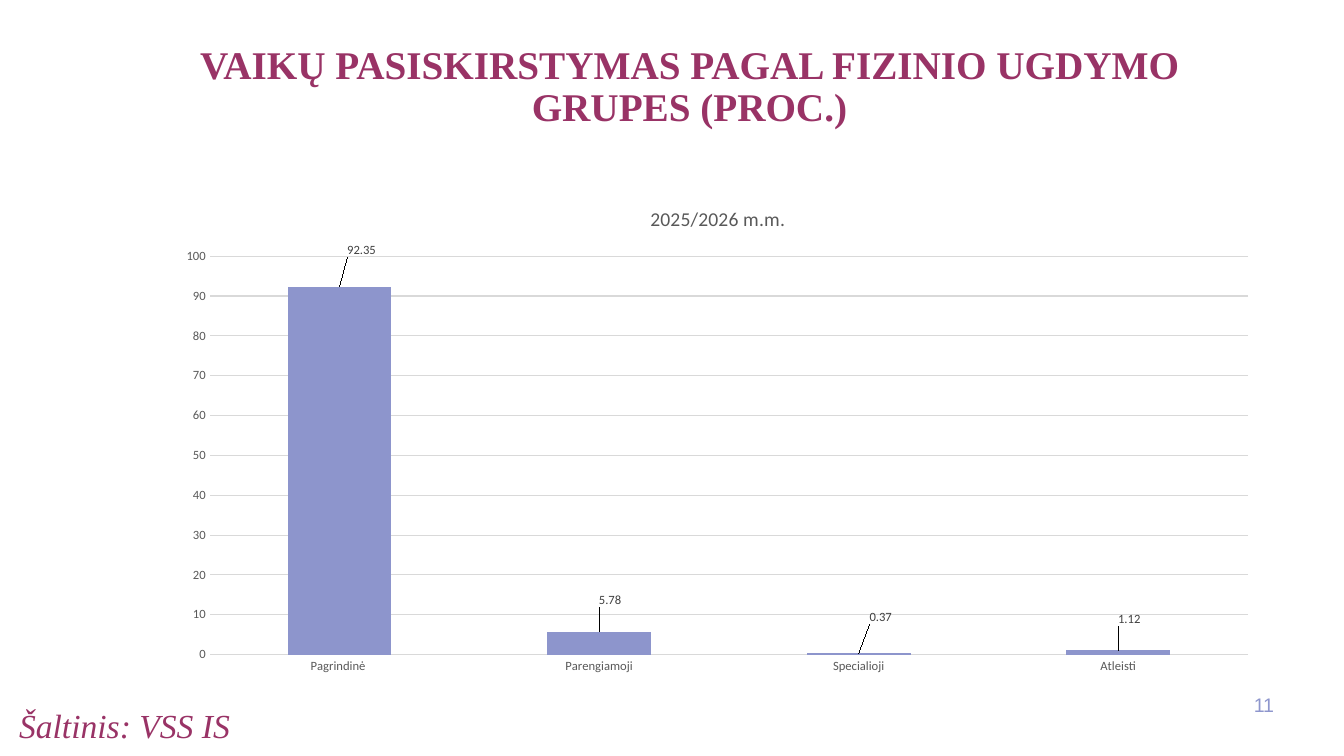
import lxml.etree
import pptx
import pptx.chart.data
import pptx.dml.color
import pptx.enum.chart
import pptx.enum.text
import pptx.oxml
import pptx.oxml.ns
import pptx.util
from pptx.util import Cm

# Content
TITLE = "VAIKŲ PASISKIRSTYMAS PAGAL FIZINIO UGDYMO GRUPES (PROC.)"
SOURCE = "Šaltinis: VSS IS"
PAGE_NUMBER = "11"
SERIES_NAME = "2025/2026 m.m."
# Group, percentage, label shift (fractions of chart width and height)
GROUPS = [
    ("Pagrindinė ", 92.35, (0.02, -0.05)),
    ("Parengiamoji", 5.78, (0.01, -0.04)),
    ("Specialioji", 0.37, (0.02, -0.05)),
    ("Atleisti", 1.12, (0.01, -0.04)),
]
# Left, top, width, height in centimetres
TITLE_BOX = (2.77, 1.02, 29.21, 2.87)
SOURCE_BOX = (0.23, 17.65, 16, 0.97)
NUMBER_BOX = (31.04, 17.25, 1.32, 1.02)
CHART_BOX = (4.17, 4.7, 27.84, 12.55)
PLOT_AREA = {"x": 0.04, "y": 0.14, "w": 0.94, "h": 0.8}


class Theme:
    serif, sans, chart_font = "Times New Roman", "Arial", "Calibri"
    heading, number, bar = "993366", "8E96CD", "8D95CC"
    chart_text, label, grid = "595959", "404040", "D9D9D9"
    title_size, source_size, number_size = 28, 24, 14
    chart_title_size, chart_size, small_size = 14, 10, 9


def rgb(color):
    return pptx.dml.color.RGBColor.from_string(color)


def style(font, name, size, color, bold=False, italic=False):
    font.name, font.size = name, pptx.util.Pt(size)
    font.color.rgb = rgb(color)
    font.bold, font.italic = bold, italic


def add_text(slide, box, text, alignment, anchor, *font, **emphasis):
    frame = slide.shapes.add_textbox(*map(Cm, box)).text_frame
    frame.word_wrap = True
    frame.vertical_anchor = anchor
    paragraph = frame.paragraphs[0]
    paragraph.alignment = alignment
    run = paragraph.add_run()
    run.text = text
    style(run.font, *font, **emphasis)
    return paragraph


def manual_layout(settings):
    layout = pptx.oxml.parse_xml(
        f"<c:layout {pptx.oxml.ns.nsdecls('c')}><c:manualLayout/></c:layout>")
    for tag, value in settings.items():
        lxml.etree.SubElement(
            layout[0], pptx.oxml.ns.qn(f"c:{tag}"), val=str(value))
    return layout


def add_group_chart(slide):
    data = pptx.chart.data.CategoryChartData()
    data.categories = [name for name, _, _ in GROUPS]
    data.add_series(SERIES_NAME, [value for _, value, _ in GROUPS])
    kind = pptx.enum.chart.XL_CHART_TYPE.COLUMN_CLUSTERED
    chart = slide.shapes.add_chart(kind, *map(Cm, CHART_BOX), data).chart
    style(chart.font, Theme.chart_font, Theme.chart_size, "000000")
    chart.has_legend = False

    # Chart title
    chart.has_title = True
    run = chart.chart_title.text_frame.paragraphs[0].add_run()
    run.text = SERIES_NAME
    style(run.font, Theme.chart_font, Theme.chart_title_size, Theme.chart_text)
    chart.chart_title.include_in_layout = False

    # Axes and gridlines
    for axis in (chart.category_axis, chart.value_axis):
        axis.major_tick_mark = pptx.enum.chart.XL_TICK_MARK.NONE
        axis.minor_tick_mark = pptx.enum.chart.XL_TICK_MARK.NONE
        axis.format.line.fill.background()
        style(axis.tick_labels.font, Theme.chart_font, Theme.small_size, Theme.chart_text)
    axis = chart.value_axis
    axis.minimum_scale, axis.maximum_scale, axis.major_unit = 0, 100, 10
    axis.has_major_gridlines = True
    grid_line = axis.major_gridlines.format.line
    grid_line.color.rgb = rgb(Theme.grid)
    grid_line.width = pptx.util.Pt(0.75)

    # Columns
    plot = chart.plots[0]
    plot.gap_width = 150
    plot.vary_by_categories = False
    series = plot.series[0]
    series.format.fill.solid()
    series.format.fill.fore_color.rgb = rgb(Theme.bar)

    # Value labels, each shifted from its column's end
    for index in range(len(GROUPS)):
        label = series.points[index].data_label
        style(label.font, Theme.chart_font, Theme.small_size, Theme.label)
        label.position = pptx.enum.chart.XL_LABEL_POSITION.OUTSIDE_END
    label_elements = series._element.xpath("c:dLbls/c:dLbl")
    for element, (_, _, (shift_x, shift_y)) in zip(label_elements, GROUPS):
        element.insert(1, manual_layout({"x": shift_x, "y": shift_y}))

    # Plot area position
    plot_area = chart._chartSpace.xpath("c:chart/c:plotArea")[0]
    for old_layout in plot_area.xpath("c:layout"):
        plot_area.remove(old_layout)
    plot_area.insert(0, manual_layout(
        {"layoutTarget": "inner", "xMode": "edge", "yMode": "edge", **PLOT_AREA}))


def main():
    presentation = pptx.Presentation()
    presentation.slide_width, presentation.slide_height = Cm(33.87), Cm(19.05)
    slide = presentation.slides.add_slide(presentation.slide_layouts[6])
    align, anchor = pptx.enum.text.PP_ALIGN, pptx.enum.text.MSO_ANCHOR

    # Heading, source and page number
    heading = add_text(slide, TITLE_BOX, TITLE, align.CENTER, anchor.TOP,
                       Theme.serif, Theme.title_size, Theme.heading, bold=True)
    heading.line_spacing = 0.9
    add_text(slide, SOURCE_BOX, SOURCE, align.LEFT, anchor.TOP,
             Theme.serif, Theme.source_size, Theme.heading, italic=True)
    add_text(slide, NUMBER_BOX, PAGE_NUMBER, align.RIGHT, anchor.MIDDLE,
             Theme.sans, Theme.number_size, Theme.number)

    # Chart
    add_group_chart(slide)
    presentation.save("out.pptx")


if __name__ == "__main__":
    main()
